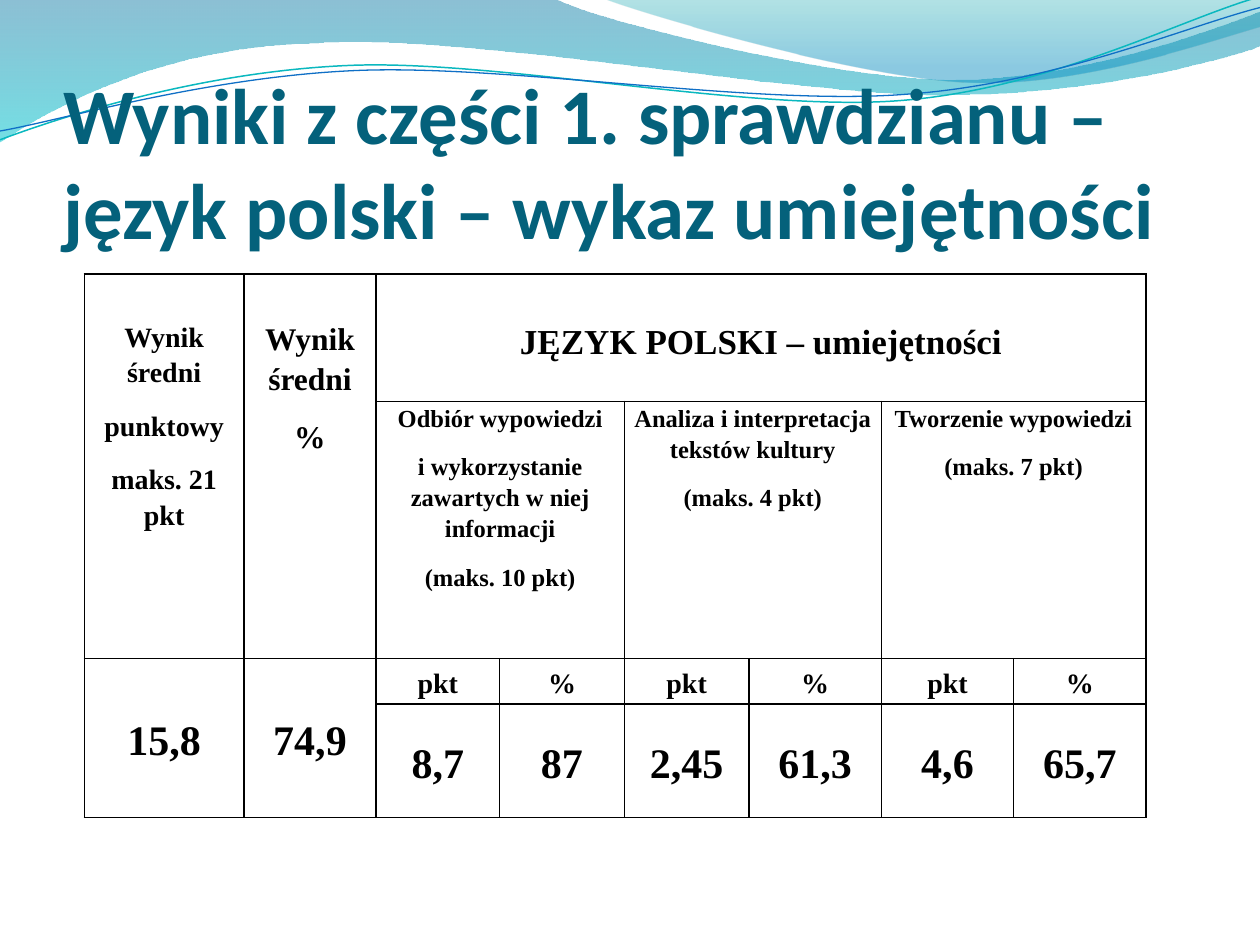
"""Build a slide with Polish-language test results under a wave banner."""
import pptx
import pptx.dml.color
import pptx.enum.text
import pptx.oxml
import pptx.oxml.ns
import pptx.util
from lxml import etree

color = pptx.dml.color.RGBColor.from_string
qualified = pptx.oxml.ns.qn
anchors = pptx.enum.text.MSO_ANCHOR
aligns = pptx.enum.text.PP_ALIGN


def style(target, formats):
    """Set every attribute named in formats on target."""
    for name, value in formats.items():
        setattr(target, name, value)


def draw_curve(shapes, unit, start, segments, close):
    """Draw a freeform whose 2-number segments are straight and 6-number ones Bézier."""
    knots = [start] + [segment[-2:] for segment in segments]
    left, top = (min(values) for values in zip(*knots))
    builder = shapes.build_freeform(start[0] * 1000, start[1] * 1000, scale=unit / 1000)
    builder.add_line_segments([(x * 1000, y * 1000) for x, y in knots[1:]], close=close)
    shape = builder.convert_to_shape()
    shape.shadow.inherit = False
    for line, segment in zip(list(shape.element.iter(qualified("a:lnTo"))), segments):
        if len(segment) == 6:
            bend = etree.Element(qualified("a:cubicBezTo"))
            line.getparent().replace(line, bend)
            for x, y in zip(segment[::2], segment[1::2]):
                etree.SubElement(bend, qualified("a:pt"), x=str(round((x - left) * 1000)),
                                 y=str(round((y - top) * 1000)))
    return shape


presentation = pptx.Presentation()
style(presentation, {"slide_width": pptx.util.Inches(10), "slide_height": pptx.util.Inches(7.5)})
width, height = presentation.slide_width, presentation.slide_height
slide = presentation.slides.add_slide(presentation.slide_layouts[5])
title = slide.shapes.title

waves = [
    ((0, 0), [(4.4, -0.01), (4.76, 0.17, 6.64, 0.63, 7.58, 0.63), (8.53, 0.63, 9.58, 0.26, 10, 0.09),
              (10.01, 0.36), (9.83, 0.44, 8.7, 0.76, 7.46, 0.75), (6.22, 0.75, 3.82, 0.28, 2.57, 0.34),
              (1.29, 0.36, 0.46, 0.83, -0.01, 1.13), (0, 0)],
     [(0, "0074A1", 45), (1, "00C6CF", 55)]),
    ((4.79, -0.01), [(5.09, 0.11, 6.82, 0.62, 7.69, 0.65), (8.56, 0.69, 9.61, 0.32, 10, 0.21),
                     (10, 0), (4.79, -0.01)],
     [(0, "00A1A9", 30), (0.8, "008BBF", 45)]),
]
for start, segments, stops in waves:
    wave = draw_curve(slide.shapes, width / 10, start, segments, True)
    wave.line.fill.background()
    wave.fill.gradient()
    wave.fill.gradient_angle = 270
    for stop, (position, hue, opacity) in zip(wave.fill.gradient_stops, stops):
        stop.position = position
        stop.color.rgb = color(hue)
    for element, (position, hue, opacity) in zip(wave.element.spPr.iter(qualified("a:srgbClr")), stops):
        etree.SubElement(element, qualified("a:alpha"), val=str(opacity * 1000))

strands = [
    ((0, 1.11), [(0.48, 0.93, 1.58, 0.57, 2.77, 0.52), (3.95, 0.47, 5.93, 0.89, 7.13, 0.8),
                 (8.33, 0.71, 9.38, 0.15, 9.98, -0.02)], "0AB8BF", 0.85),
    ((0, 1.04), [(0.47, 0.96, 1.64, 0.61, 2.83, 0.56), (4.03, 0.51, 5.97, 0.84, 7.17, 0.75),
                 (8.36, 0.67, 9.41, 0.21, 10, 0.06)], "0F6FC6", 0.75),
]
for start, segments, hue, thickness in strands:
    strand = draw_curve(slide.shapes, width / 10, start, segments, False)
    strand.fill.background()
    strand.line.color.rgb = color(hue)
    strand.line.width = pptx.util.Pt(thickness)

column_percents = [12.65, 10.5, 9.8, 9.9, 9.9, 10.5, 10.5, 10.5]
row_percents = [13.47, 21.2, 4.8, 12]
frame = slide.shapes.add_table(
    len(row_percents), len(column_percents), int(width * 0.067), int(height * 0.29),
    int(width * sum(column_percents) / 100), int(height * sum(row_percents) / 100))
table = frame.table
style(table, {"first_row": False, "horz_banding": False})
for column, percent in zip(table.columns, column_percents):
    column.width = int(width * percent / 100)
for row, percent in zip(table.rows, row_percents):
    row.height = int(height * percent / 100)

for cell in table.iter_cells():
    properties = cell._tc.get_or_add_tcPr()
    for side in "LRTB":
        properties.append(pptx.oxml.parse_xml(
            f'<a:ln{side} {pptx.oxml.ns.nsdecls("a")} w="12700"><a:solidFill>'
            f'<a:srgbClr val="000000"/></a:solidFill></a:ln{side}>'))
    cell.fill.background()

lead = 4.6
entries = [
    (0, 0, 2, 1, 16, lead, ["Wynik średni", "punktowy", "maks. 21 pkt"]),
    (0, 1, 2, 1, 18, lead, ["Wynik średni", "%"]),
    (0, 2, 1, 6, 20, lead, ["JĘZYK POLSKI – umiejętności"]),
    (1, 2, 1, 2, 14, 0, ["Odbiór wypowiedzi", "i wykorzystanie zawartych w niej informacji",
                         "(maks. 10 pkt)"]),
    (1, 4, 1, 2, 14, 0, ["Analiza i interpretacja tekstów kultury", "(maks. 4 pkt)"]),
    (1, 6, 1, 2, 14, 0, ["Tworzenie wypowiedzi", "(maks. 7 pkt)"]),
    (2, 0, 2, 1, 24, 0, ["15,8"]),
    (2, 1, 2, 1, 24, 0, ["74,9"]),
]
for index, score in enumerate(["8,7", "87", "2,45", "61,3", "4,6", "65,7"]):
    entries.append((2, 2 + index, 1, 1, 16, 0, ["%" if index % 2 else "pkt"]))
    entries.append((3, 2 + index, 1, 1, 24, 0, [score]))

for row, column, row_span, column_span, size, top, lines in entries:
    cell = table.cell(row, column)
    if row_span * column_span > 1:
        cell.merge(table.cell(row + row_span - 1, column + column_span - 1))
    style(cell, {"margin_left": pptx.util.Inches(0.07), "margin_right": pptx.util.Inches(0.07),
                 "margin_top": int(height * top / 100), "margin_bottom": 0,
                 "vertical_anchor": anchors.MIDDLE if row > 1 else anchors.TOP})
    cell.text_frame.text = "\n".join(lines)
    for paragraph in cell.text_frame.paragraphs:
        style(paragraph, {"alignment": aligns.CENTER, "line_spacing": 1.15,
                          "space_after": pptx.util.Pt(10)})
        for run in paragraph.runs:
            style(run.font, {"name": "Times New Roman", "size": pptx.util.Pt(size), "bold": True})
            run.font.color.rgb = color("000000")

style(title, {"left": int(width * 0.05), "top": int(height * 0.1),
              "width": int(width * 0.91), "height": int(height * 0.17)})
title.text_frame.text = "Wyniki z części 1. sprawdzianu – język polski – wykaz umiejętności"
style(title.text_frame, {"margin_left": 0, "margin_right": 0, "margin_bottom": 0, "word_wrap": True,
                         "margin_top": pptx.util.Inches(0.05), "vertical_anchor": anchors.BOTTOM,
                         "auto_size": pptx.enum.text.MSO_AUTO_SIZE.NONE})
heading = title.text_frame.paragraphs[0]
heading.alignment = aligns.LEFT
style(heading.runs[0].font, {"name": "Calibri", "size": pptx.util.Pt(45), "bold": True})
heading.runs[0].font.color.rgb = color("04617B")
slide.shapes.element.append(title.element)

presentation.save("out.pptx")
